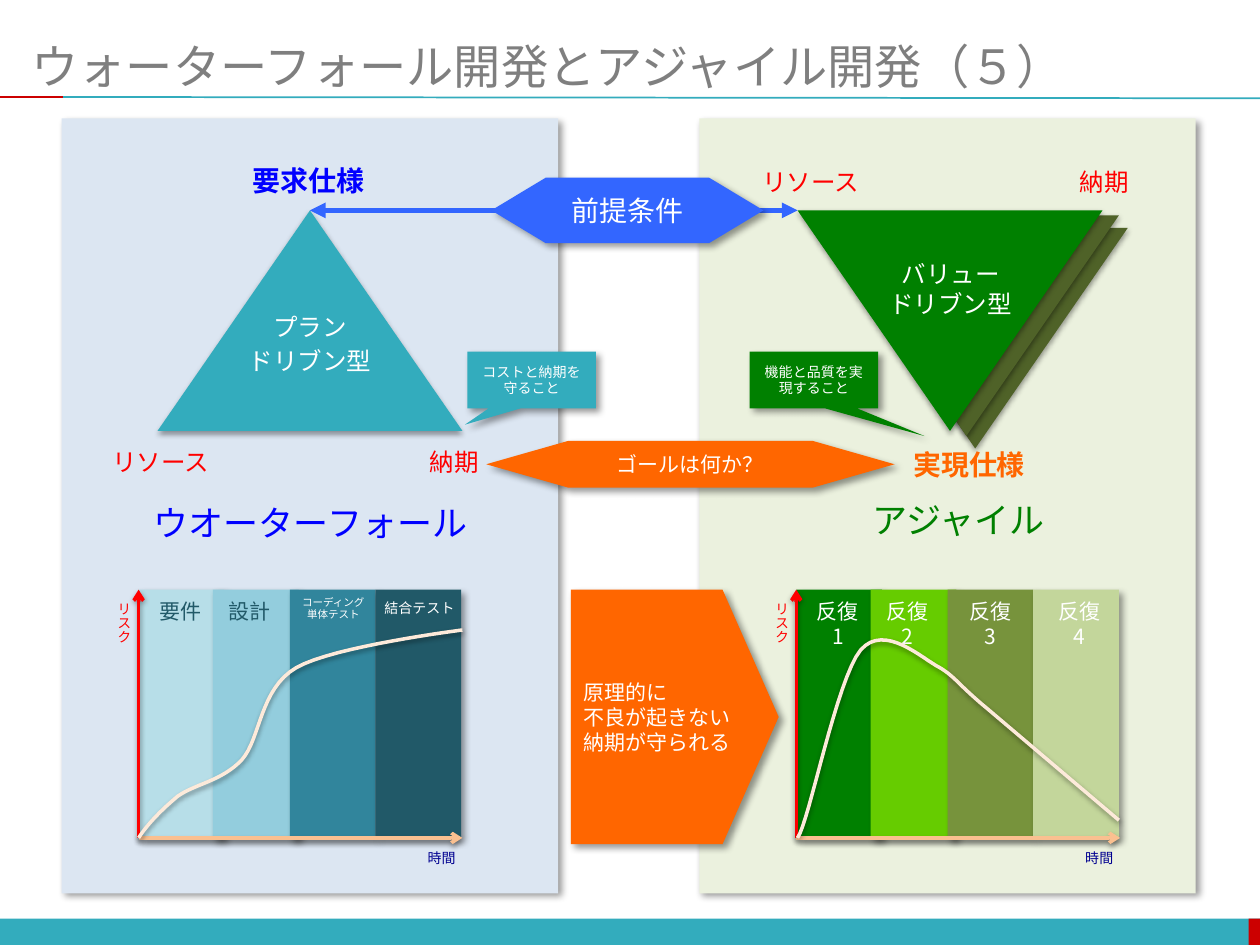
from dataclasses import dataclass

from lxml import etree
from pptx import Presentation
from pptx.dml.color import RGBColor
from pptx.enum.shapes import MSO_CONNECTOR, MSO_SHAPE
from pptx.enum.text import MSO_ANCHOR, PP_ALIGN
from pptx.oxml.ns import qn
from pptx.util import Inches, Pt

RECTANGLE = MSO_SHAPE.RECTANGLE
TRIANGLE = MSO_SHAPE.ISOSCELES_TRIANGLE
HEXAGON = MSO_SHAPE.FLOWCHART_PREPARATION
PENTAGON = MSO_SHAPE.PENTAGON
CALLOUT = MSO_SHAPE.RECTANGULAR_CALLOUT
STRAIGHT = MSO_CONNECTOR.STRAIGHT
LEFT, CENTER = PP_ALIGN.LEFT, PP_ALIGN.CENTER
TOP, MIDDLE = MSO_ANCHOR.TOP, MSO_ANCHOR.MIDDLE


@dataclass(frozen=True)
class Theme:
    font: str = "Noto Sans CJK JP"
    teal: str = "33ACBD"
    crimson: str = "CC0000"
    red: str = "FF0000"
    blue: str = "0000FF"
    sky: str = "3366FF"
    navy: str = "000090"
    green: str = "008000"
    olive: str = "4F6228"
    orange: str = "FF6600"
    peach: str = "FAC090"
    cream: str = "FDEADA"
    white: str = "FFFFFF"
    gray: str = "7F7F7F"
    deep_teal: str = "215968"
    plan_panel: str = "DCE6F2"
    agile_panel: str = "EBF1DE"
    plan_bands: tuple = ("B7DEE8", "93CDDD", "31859C", "215968")
    agile_bands: tuple = ("008000", "66CC00", "77933C", "C3D69B")
    title: int = 27
    heading: int = 20
    strong: int = 16
    label: int = 14
    body: int = 12
    small: int = 8
    tiny: int = 6
    # Shadows: opacity %, blur pt, distance pt, angle
    diagonal: tuple = (40, 4, 3, 45)
    below: tuple = (38, 3.1, 1.6, 90)


THEME = Theme()


def write_text(shape, text, *, size, color=THEME.white, bold=False, align=CENTER,
               anchor=TOP, wrap=True, gap=0, insets=(0.1, 0.05, 0.1, 0.05)):
    frame = shape.text_frame
    frame.word_wrap = wrap
    frame.vertical_anchor = anchor
    (frame.margin_left, frame.margin_top,
     frame.margin_right, frame.margin_bottom) = map(Inches, insets)
    for index, line in enumerate(text.split("\n")):
        paragraph = frame.add_paragraph() if index else frame.paragraphs[0]
        paragraph.alignment = align
        if index and gap:
            paragraph.space_before = Pt(gap)
        run = paragraph.add_run()
        run.text = line
        run.font.size = Pt(size)
        run.font.bold = bold
        run.font.name = THEME.font
        run.font.color.rgb = RGBColor.from_string(color)
        etree.SubElement(run.font._element, qn("a:ea"), typeface=THEME.font)


def bezier_points(start, curves, steps=16):
    points = [start]
    for first, second, end in curves:
        origin = points[-1]
        for step in range(1, steps + 1):
            t = step / steps
            weights = ((1 - t) ** 3, 3 * t * (1 - t) ** 2, 3 * t * t * (1 - t), t ** 3)
            corners = (origin, first, second, end)
            points.append(tuple(sum(w * c[axis] for w, c in zip(weights, corners))
                                for axis in (0, 1)))
    return points


class SlideBuilder:
    def __init__(self, slide, theme):
        self.slide = slide
        self.theme = theme

    def add_shadow(self, shape, shadow):
        effects = etree.SubElement(shape._element.spPr, qn("a:effectLst"))
        if shadow:
            opacity, blur, distance, angle = shadow
            outer = etree.SubElement(
                effects, qn("a:outerShdw"), blurRad=str(Pt(blur)), dist=str(Pt(distance)),
                dir=str(angle * 60000), algn="ctr", rotWithShape="0")
            color = etree.SubElement(outer, qn("a:srgbClr"), val="000000")
            etree.SubElement(color, qn("a:alpha"), val=str(opacity * 1000))

    def shape(self, kind, box, fill, *, shadow=None, flip=False, adjust=(), text="", **style):
        shape = self.slide.shapes.add_shape(kind, *map(Inches, box))
        shape.fill.solid()
        shape.fill.fore_color.rgb = RGBColor.from_string(fill)
        shape.line.fill.background()
        for index, value in enumerate(adjust):
            shape.adjustments[index] = value
        if flip:
            shape._element.spPr.get_or_add_xfrm().set("flipV", "1")
        self.add_shadow(shape, shadow)
        if text:
            write_text(shape, text, anchor=MIDDLE, **style)

    def text(self, box, text, *, vertical=False, **style):
        shape = self.slide.shapes.add_textbox(*map(Inches, box))
        write_text(shape, text, **{"wrap": False, **style})
        if vertical:
            shape.text_frame._txBody.bodyPr.set("vert", "eaVert")

    def line(self, start, end, color, width, *, head=None, tail=None, shadow=None):
        connector = self.slide.shapes.add_connector(STRAIGHT, *map(Inches, start + end))
        connector.line.color.rgb = RGBColor.from_string(color)
        connector.line.width = Pt(width)
        for tag, kind in (("a:headEnd", head), ("a:tailEnd", tail)):
            if kind:
                etree.SubElement(connector.line._ln, qn(tag), type=kind)
        self.add_shadow(connector, shadow)

    def curve(self, points):
        points = [tuple(map(Inches, point)) for point in points]
        builder = self.slide.shapes.build_freeform(*points[0])
        builder.add_line_segments(points[1:], close=False)
        shape = builder.convert_to_shape()
        shape.fill.background()
        shape.line.color.rgb = RGBColor.from_string(self.theme.cream)
        shape.line.width = Pt(2)
        self.add_shadow(shape, self.theme.below)

    def risk_chart(self, left, bands, labels, points):
        theme, top, bottom = self.theme, 4.68, 6.65
        for offset, color in zip((0, 0.59, 1.2, 1.88), bands):
            self.shape(RECTANGLE, (left + offset, top, 0.68, 1.98), color, shadow=theme.diagonal)
        for end, color in (((left, top), theme.red), ((left + 2.57, bottom), theme.peach)):
            self.line((left, bottom), end, color, 2, tail="arrow", shadow=theme.below)
        for box, text, style in labels:
            self.text(box, text, **style)
        self.curve(points)
        self.text((left - 0.34, top, 0.34, 0.44), "リスク", vertical=True,
                  size=theme.small, color=theme.red)
        self.text((left + 2.19, 6.69, 0.43, 0.24), "時間", size=theme.small, color=theme.navy)


def main():
    presentation = Presentation()
    presentation.slide_width, presentation.slide_height = Inches(10), Inches(7.5)
    slide = presentation.slides.add_slide(presentation.slide_layouts[6])
    theme = THEME
    builder = SlideBuilder(slide, theme)

    # Footer, title and rule
    builder.shape(RECTANGLE, (0, 7.29, 10, 0.22), theme.teal)
    builder.shape(RECTANGLE, (9.91, 7.29, 0.1, 0.22), theme.crimson)
    builder.line((0.5, 0.77), (10, 0.78), theme.teal, 1)
    builder.line((0, 0.77), (0.5, 0.77), theme.crimson, 1)
    builder.text((0.25, 0.29, 9.5, 0.46), "ウォーターフォール開発とアジャイル開発（５）", size=theme.title,
                 color=theme.gray, align=LEFT, anchor=MIDDLE, wrap=True, insets=(0, 0.05, 0, 0.05))

    # Background panels
    for left, color in ((0.49, theme.plan_panel), (5.55, theme.agile_panel)):
        builder.shape(RECTANGLE, (left, 0.94, 3.94, 6.15), color, shadow=theme.diagonal)

    # Triangles
    for left, top, color in ((6.53, 1.81, theme.olive), (6.46, 1.71, theme.olive),
                             (6.33, 1.67, theme.green)):
        builder.shape(TRIANGLE, (left, top, 2.42, 1.75), color, shadow=theme.below, flip=True)
    builder.shape(TRIANGLE, (1.25, 1.67, 2.42, 1.75), theme.teal, shadow=theme.below,
                  text="プラン\nドリブン型", size=theme.label, gap=3, insets=(0.1, 0.05, 0.1, 0.56))
    builder.line((2.46, 1.67), (6.33, 1.67), theme.sky, 3, head="triangle", tail="triangle")
    builder.text((6.67, 2.01, 1.75, 0.57), "バリュー\nドリブン型", size=theme.label, wrap=True)

    # Corner labels and headings
    for left, top, width, text in ((0.78, 3.5, 0.99, "リソース"), (3.31, 3.5, 0.59, "納期"),
                                   (5.94, 1.28, 0.99, "リソース"), (8.47, 1.28, 0.59, "納期")):
        builder.text((left, top, width, 0.34), text, size=theme.label, color=theme.red)
    for left, top, text, color in ((7.15, 3.5, "実現仕様", theme.orange),
                                   (1.91, 1.25, "要求仕様", theme.blue)):
        builder.text((left, top, 1.1, 0.37), text, size=theme.strong, color=color,
                     bold=True, align=LEFT)
    builder.text((6.81, 3.91, 1.6, 0.44), "アジャイル", size=theme.heading, color=theme.green)
    builder.text((1.1, 3.93, 2.73, 0.44), "ウオーターフォール", size=theme.heading, color=theme.blue)

    # Risk over time
    phase = {"size": theme.body, "color": theme.deep_teal}
    builder.risk_chart(1.1, theme.plan_bands, (
        ((1.16, 4.7, 0.54, 0.3), "要件", phase),
        ((1.71, 4.7, 0.54, 0.3), "設計", phase),
        ((2.29, 4.68, 0.71, 0.3), "コーディング\n単体テスト", {"size": theme.tiny}),
        ((2.95, 4.71, 0.76, 0.24), "結合テスト", {"size": theme.small}),
    ), bezier_points((1.1, 6.65), (
        ((1.18, 6.53), (1.28, 6.43), (1.41, 6.32)), ((1.55, 6.22), (1.76, 6.2), (1.92, 6.03)),
        ((2.07, 5.86), (2.06, 5.47), (2.35, 5.3)), ((2.64, 5.13), (3.67, 5), (3.67, 5)))))
    iteration = {"size": theme.body, "wrap": True}
    builder.risk_chart(6.32, theme.agile_bands, [
        ((left, 4.7, 0.58, 0.3), f"反復{number}", iteration)
        for number, left in enumerate((6.36, 6.91, 7.57, 8.28), 1)
    ], bezier_points((6.33, 6.65), (
        ((6.42, 6.53), (6.64, 5.39), (6.83, 5.16)), ((7.02, 4.94), (7.32, 5.23), (7.46, 5.3)),
        ((7.59, 5.38), (7.59, 5.42), (7.83, 5.62)))) + [(8.88, 6.51)])

    # Comparisons and callouts
    for kind, box, color, adjust, text, style in (
        (HEXAGON, (3.9, 1.41, 2.16, 0.52), theme.sky, (), "前提条件", {"size": theme.strong}),
        (PENTAGON, (4.53, 4.68, 1.65, 2.02), theme.orange, (0.27,),
         "原理的に\n不良が起きない\n納期が守られる", {"size": theme.body, "align": LEFT}),
        (CALLOUT, (3.71, 2.79, 1.02, 0.45), theme.teal, (-0.52, 0.79),
         "コストと納期を守ること", {"size": theme.small}),
        (CALLOUT, (5.95, 2.79, 1.02, 0.45), theme.green, (0.86, 0.99),
         "機能と品質を実現すること", {"size": theme.small}),
        (HEXAGON, (3.86, 3.5, 3.24, 0.37), theme.orange, (), "ゴールは何か？", {"size": theme.body}),
    ):
        builder.shape(kind, box, color, shadow=theme.diagonal, adjust=adjust, text=text, **style)

    presentation.save("out.pptx")


if __name__ == "__main__":
    main()
